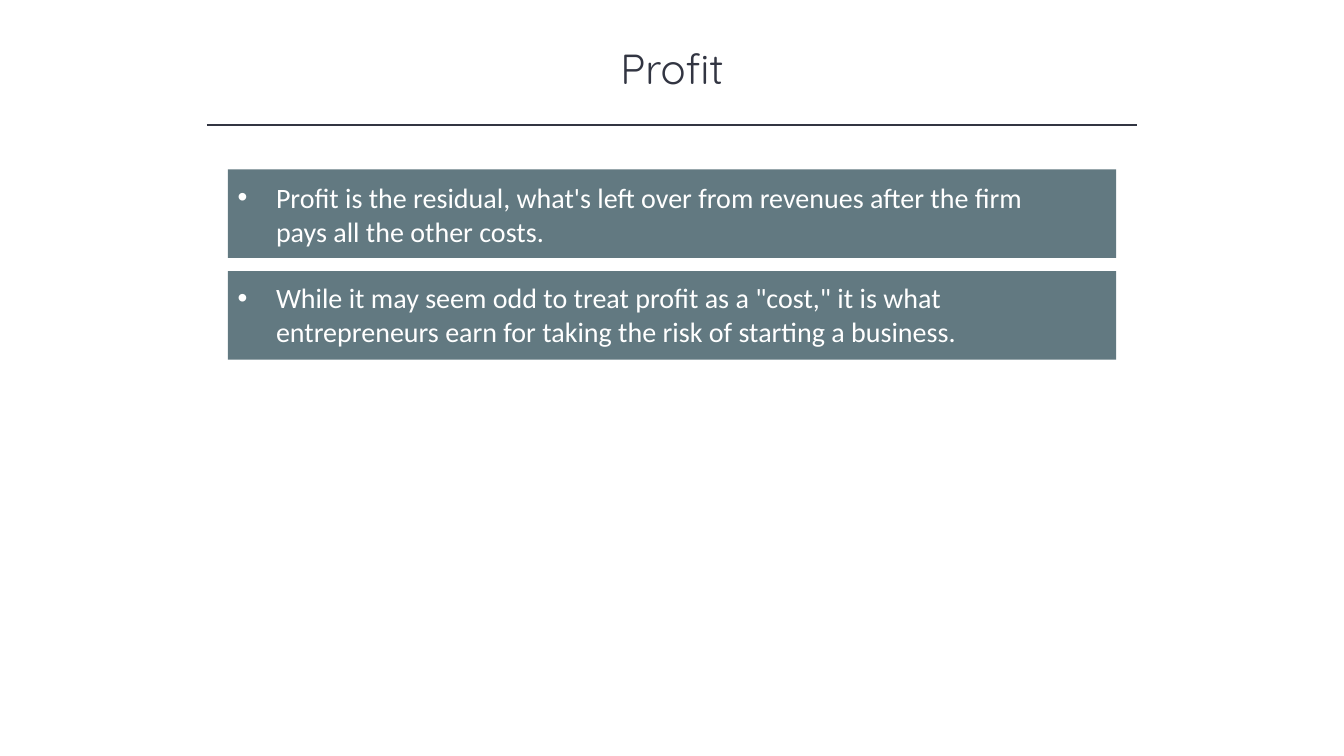
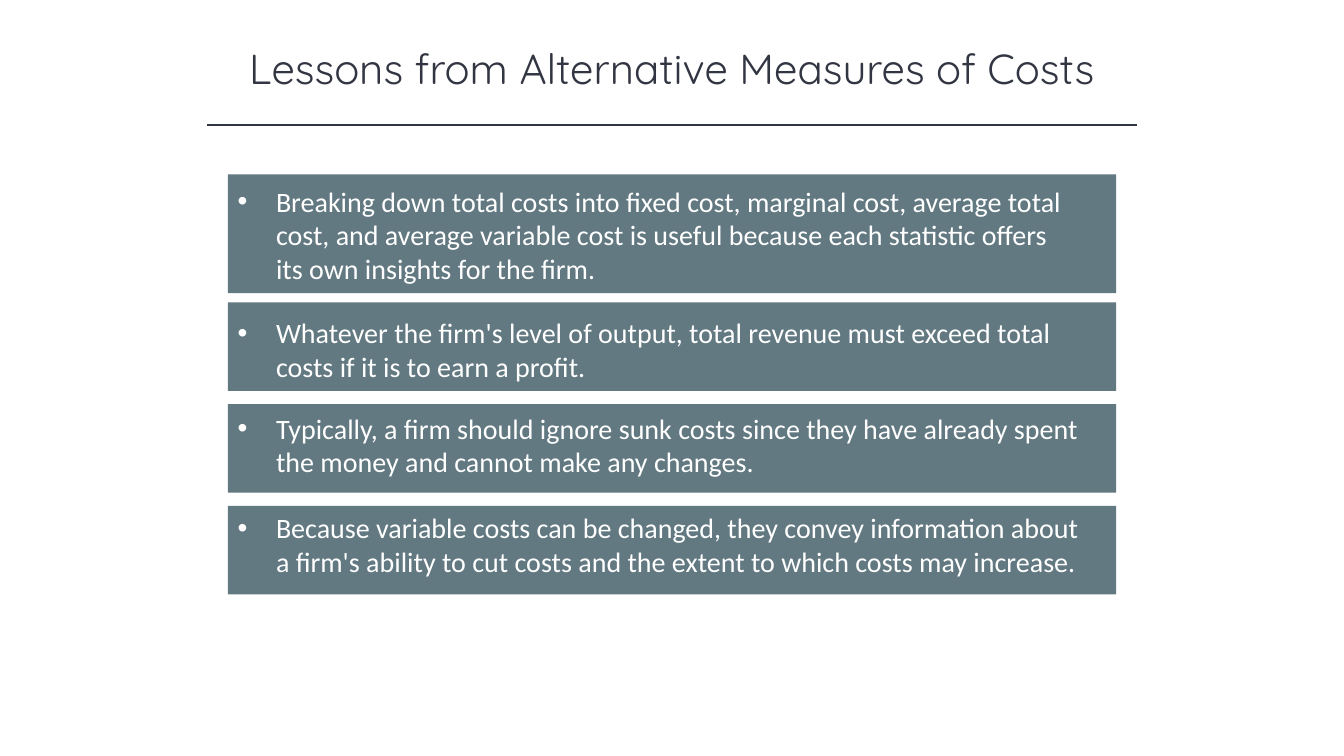
from pptx import Presentation
from pptx.dml.color import RGBColor
from pptx.enum.shapes import MSO_CONNECTOR, MSO_SHAPE
from pptx.enum.text import MSO_ANCHOR, PP_ALIGN
from pptx.oxml.ns import qn
from pptx.util import Inches, Pt
from lxml import etree

STRAIGHT = MSO_CONNECTOR.STRAIGHT
RECTANGLE = MSO_SHAPE.RECTANGLE
TOP = MSO_ANCHOR.TOP
LEFT, CENTER = PP_ALIGN.LEFT, PP_ALIGN.CENTER

WIDTH, HEIGHT = Inches(13.33), Inches(7.5)
INK, SLATE, WHITE = "323542", "627981", "FFFFFF"

TITLE_FONT = {"name": "Quicksand", "size": Pt(30)}
BODY_FONT = {"name": "Calibri", "size": Pt(20)}

# Widths of the centred parts, in percent of the slide's width
TITLE_WIDTH, RULE_WIDTH, BAND_WIDTH = 75, 69.2, 66.1
# Vertical places, in percent of the slide's height
TITLE_TOP, TITLE_HEIGHT, RULE_TOP = 4.93, 8.13, 16.53
BAND_PADDING, LINE_HEIGHT = 3.73, 4
BULLET_INDENT = Inches(0.38)

# Each band: text, lines of text, gap above (percent), inset above text (points)
SLIDES = [
    ("Profit", [
        ("Profit is the residual, what's left over from revenues after the firm "
         "pays all the other costs.", 2, 5.87, 8),
        ("While it may seem odd to treat profit as a \"cost,\" it is what "
         "entrepreneurs earn for taking the risk of starting a business.",
         2, 1.73, 7),
    ]),
    ("Lessons from Alternative Measures of Costs", [
        ("Breaking down total costs into fixed cost, marginal cost, average total "
         "cost, and average variable cost is useful because each statistic offers "
         "its own insights for the firm.", 3, 6.53, 7),
        ("Whatever the firm's level of output, total revenue must exceed total "
         "costs if it is to earn a profit.", 2, 1.2, 9.5),
        ("Typically, a firm should ignore sunk costs since they have already spent "
         "the money and cannot make any changes.", 2, 1.73, 5),
        ("Because variable costs can be changed, they convey information about "
         "a firm's ability to cut costs and the extent to which costs may "
         "increase.", 2, 1.73, 3.5),
    ]),
]


def color(value):
    return RGBColor.from_string(value)


def across(share):
    return round(WIDTH * share / 100)


def down(share):
    return round(HEIGHT * share / 100)


def centred(top, width, height):
    """Left, top, width and height of a box centred on the slide."""
    return across((100 - width) / 2), down(top), across(width), down(height)


def write(frame, text, font_format, ink, alignment):
    frame.word_wrap = True
    frame.vertical_anchor = TOP
    paragraph = frame.paragraphs[0]
    paragraph.alignment = alignment
    run = paragraph.add_run()
    run.text = text
    for key, value in font_format.items():
        setattr(run.font, key, value)
    run.font.color.rgb = color(ink)
    return paragraph


def add_bullet(paragraph):
    properties = paragraph._p.get_or_add_pPr()
    properties.set("marL", str(BULLET_INDENT))
    properties.set("indent", str(-BULLET_INDENT))
    etree.SubElement(properties, qn("a:buFont")).set("typeface", "Arial")
    etree.SubElement(properties, qn("a:buChar")).set("char", "•")


def add_title(slide, text):
    title = slide.shapes.add_textbox(*centred(TITLE_TOP, TITLE_WIDTH, TITLE_HEIGHT))
    write(title.text_frame, text, TITLE_FONT, INK, CENTER)


def add_rule(slide):
    left, top, width, _ = centred(RULE_TOP, RULE_WIDTH, 0)
    rule = slide.shapes.add_connector(STRAIGHT, left, top, left + width, top)
    rule.line.color.rgb = color(INK)
    rule.line.width = Pt(1)
    etree.SubElement(rule._element.spPr, qn("a:effectLst"))


def add_band(slide, text, top, height, inset):
    band = slide.shapes.add_shape(RECTANGLE, *centred(top, BAND_WIDTH, height))
    band.shadow.inherit = False
    band.fill.solid()
    band.fill.fore_color.rgb = color(SLATE)
    band.line.fill.background()
    margins = {"margin_left": Inches(0.1), "margin_right": Inches(0.37),
               "margin_top": Pt(inset), "margin_bottom": 0}
    for key, value in margins.items():
        setattr(band.text_frame, key, value)
    add_bullet(write(band.text_frame, text, BODY_FONT, WHITE, LEFT))


def add_bands(slide, bands):
    top = RULE_TOP
    for text, lines, gap, inset in bands:
        top += gap
        height = BAND_PADDING + LINE_HEIGHT * lines
        add_band(slide, text, top, height, inset)
        top += height


def main():
    deck = Presentation()
    deck.slide_width, deck.slide_height = WIDTH, HEIGHT
    blank = deck.slide_layouts[6]
    for title, bands in SLIDES:
        slide = deck.slides.add_slide(blank)
        add_title(slide, title)
        add_rule(slide)
        add_bands(slide, bands)
    deck.save("out.pptx")


if __name__ == "__main__":
    main()
